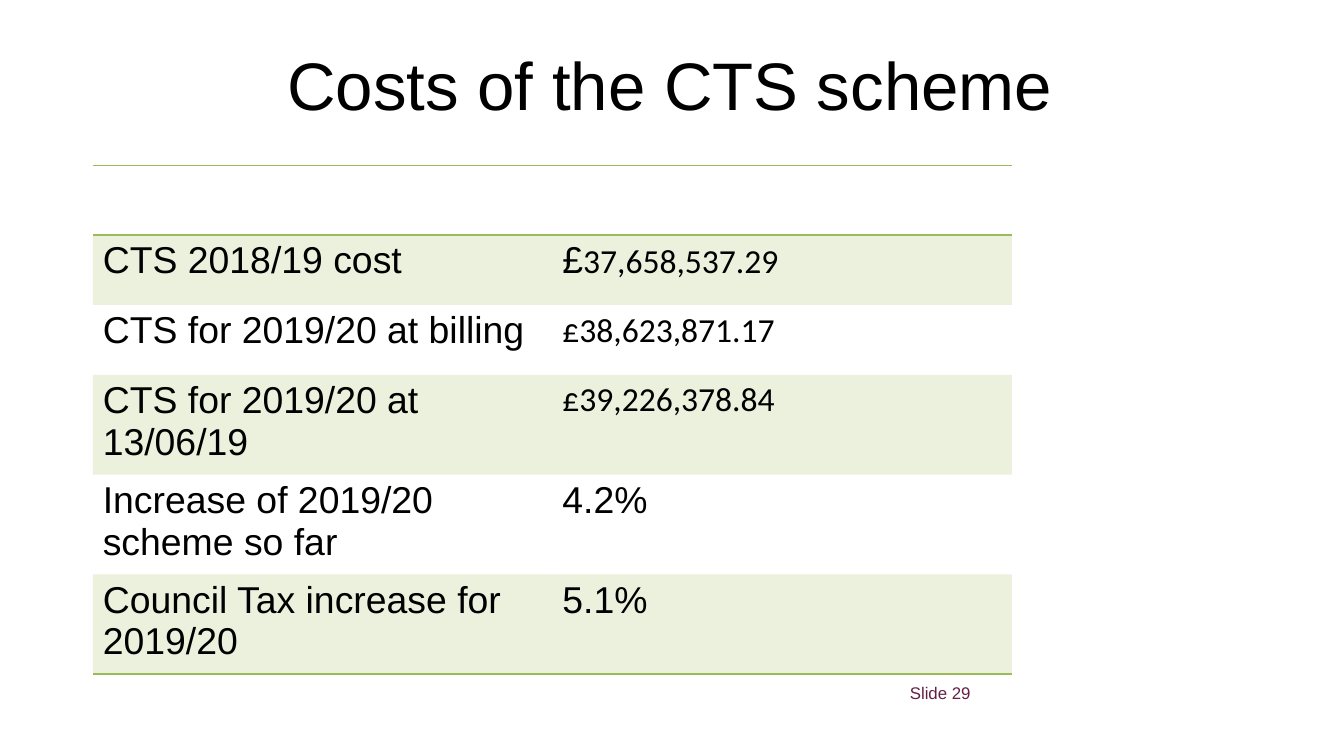
from dataclasses import dataclass

from lxml import etree
from pptx import Presentation
from pptx.dml.color import RGBColor
from pptx.enum.text import MSO_ANCHOR, PP_ALIGN
from pptx.oxml.ns import qn
from pptx.util import Inches, Pt

CENTER = PP_ALIGN.CENTER
MIDDLE = MSO_ANCHOR.MIDDLE
TITLE_ONLY = 5
NO_STYLE = "{2D5ABB26-0587-4C30-8999-92F81FD0307C}"


@dataclass(frozen=True)
class Theme:
    """Colours, fonts and type sizes of the slide."""
    ink: str = "000000"
    green: str = "9BBB59"
    plum: str = "662046"
    font: str = "Arial"
    figure_font: str = "Calibri"
    title: int = 36
    label: int = 20
    figure: int = 18
    small: int = 9
    band_alpha: int = 20


class SlideBuilder:
    """Adds styled elements to the current slide."""

    def __init__(self, slide, theme):
        self.s = slide
        self.theme = theme

    def style(self, r, size, color=None, font=None):
        """Format one run."""
        r.font.name = font or self.theme.font
        r.font.size = Pt(size)
        r.font.color.rgb = RGBColor.from_string(color or self.theme.ink)

    def title(self, text, left, top, width, height):
        """Fill and place the title placeholder."""
        sp = self.s.shapes.title
        sp.left, sp.top = Inches(left), Inches(top)
        sp.width, sp.height = Inches(width), Inches(height)
        tf = sp.text_frame
        tf.text = text
        tf.vertical_anchor = MIDDLE
        tf.margin_top = Inches(0.02)
        p = tf.paragraphs[0]
        p.alignment = CENTER
        self.style(p.runs[0], self.theme.title)

    def slide_label(self, text, left, top, width, height):
        """Add the small slide number label."""
        sp = self.s.shapes.add_textbox(Inches(left), Inches(top), Inches(width), Inches(height))
        tf = sp.text_frame
        tf.word_wrap = True
        tf.margin_left = Inches(0.13)
        tf.text = text
        self.style(tf.paragraphs[0].runs[0], self.theme.small, self.theme.plum)

    def border(self, cell, side):
        """Draw a green rule on the T or B side of a cell."""
        ln = etree.Element(qn(f"a:ln{side}"), w=str(Pt(1)))
        fill = etree.SubElement(ln, qn("a:solidFill"))
        etree.SubElement(fill, qn("a:srgbClr"), val=self.theme.green)
        cell._tc.get_or_add_tcPr().insert(0, ln)

    def band(self, cell):
        """Fill a cell with translucent green."""
        cell.fill.solid()
        cell.fill.fore_color.rgb = RGBColor.from_string(self.theme.green)
        color = cell._tc.tcPr.find(f"{qn('a:solidFill')}/{qn('a:srgbClr')}")
        etree.SubElement(color, qn("a:alpha"), val=str(self.theme.band_alpha * 1000))

    def cell(self, cell, runs):
        """Set the margins and runs of a cell."""
        cell.margin_left = cell.margin_right = Inches(0.1) * 3 // 4
        cell.margin_top = cell.margin_bottom = Inches(0.05) * 3 // 4
        p = cell.text_frame.paragraphs[0]
        for text, size, font in runs:
            r = p.add_run()
            r.text = text
            self.style(r, size, font=font)

    def table(self, rows, left, top, col_width, row_height, height):
        """Add a two-column banded table with an empty ruled header."""
        n_rows, n_cols = len(rows), len(rows[0])
        frame = self.s.shapes.add_table(n_rows, n_cols, Inches(left), Inches(top),
                                        Inches(col_width * n_cols), Inches(height))
        table = frame.table
        table.first_row = table.horz_banding = False
        table._tbl.tblPr.find(qn("a:tableStyleId")).text = NO_STYLE
        for i, row in enumerate(rows):
            table.rows[i].height = Inches(row_height)
            for j, runs in enumerate(row):
                cell = table.cell(i, j)
                self.cell(cell, runs)
                if i % 2:
                    self.band(cell)
                else:
                    cell.fill.background()
                if i in (0, n_rows - 1):
                    self.border(cell, "B")
                if i == 0:
                    self.border(cell, "T")
        frame.height = Inches(height)


def main():
    """Build the slide and save it."""
    prs = Presentation()
    prs.slide_width = Inches(10)
    prs.slide_height = prs.slide_width * 9 // 16
    theme = Theme()
    slide = SlideBuilder(prs.slides.add_slide(prs.slide_layouts[TITLE_ONLY]), theme)

    def label(text):
        return text, theme.label, theme.font

    def figure(text):
        return text, theme.figure, theme.figure_font

    costs = [
        ([], []),
        ([label("CTS 2018/19 cost")], [label("£"), figure("37,658,537.29")]),
        ([label("CTS for 2019/20 at billing")], [figure("£38,623,871.17")]),
        ([label("CTS for 2019/20 at 13/06/19")], [figure("£39,226,378.84")]),
        ([label("Increase of 2019/20 scheme so far")], [label("4.2%")]),
        ([label("Council Tax increase for 2019/20")], [label("5.1%")]),
    ]
    slide.slide_label("Slide 29", 6.64, 5.03, 2.33, 0.3)
    slide.title("Costs of the CTS scheme", 1.96, 0.27, 6.05, 0.74)
    slide.table(costs, 0.69, 1.23, 3.42, 0.52, 3.54)
    prs.save("out.pptx")


if __name__ == "__main__":
    main()
